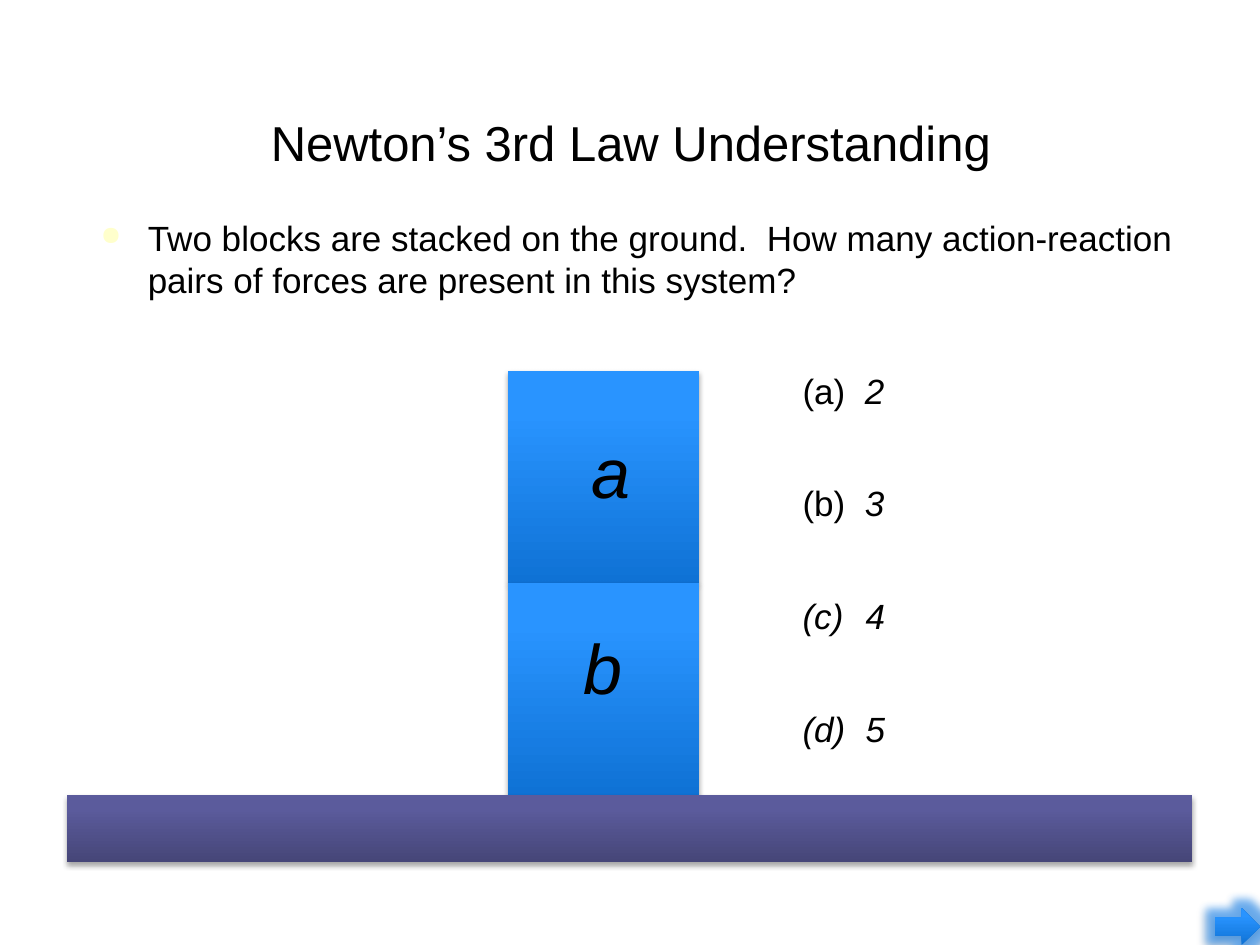
from lxml import etree
from pptx import Presentation
from pptx import util as u
from pptx.dml.color import RGBColor
from pptx.enum import shapes, text
from pptx.oxml.ns import qn

COLORS = {
    "text": "000000",
    "bullet": "FFFFCC",
    "shadow": "000000",
    "glow": "2994FF",
}
BLUE = {0: "0F72D5", 80: "2994FF", 100: "2B95FF"}
PURPLE = {0: "464678", 80: "5B5B9C", 100: "5B5B9E"}
ANSWERS = [("(a)  ", "2"), ("(b)  ", "3"), ("", "4"), ("", "5")]


def sub(parent, tag, **attributes):
    values = {key: str(value) for key, value in attributes.items()}
    return etree.SubElement(parent, qn(tag), values)


def add_color(parent, color, alpha=100):
    clr = sub(parent, "a:srgbClr", val=color)
    if alpha < 100:
        sub(clr, "a:alpha", val=alpha * 1000)


def add_solid(slide, preset, box, gradient, glow=False):
    """Add an unlined preset shape, shaded from bottom to top, with a soft shadow."""
    solid = slide.shapes.add_shape(preset, *map(u.Cm, box))
    solid.line.fill.background()
    solid.fill.gradient()
    solid.fill.gradient_angle = 90
    solid.shadow.inherit = False
    properties = solid._element.spPr

    stops = properties.find(".//" + qn("a:gsLst"))
    for stop in list(stops):
        stops.remove(stop)
    for position, color in gradient.items():
        add_color(sub(stops, "a:gs", pos=position * 1000), color)

    effects = properties.find(qn("a:effectLst"))
    if glow:
        add_color(sub(effects, "a:glow", rad=u.Pt(10)), COLORS["glow"], 60)
    shadow = sub(effects, "a:outerShdw", blurRad=u.Pt(3.1), dist=u.Pt(1.8),
                 dir=90 * 60000, rotWithShape=0)
    add_color(shadow, COLORS["shadow"], 35)


def add_frame(slide, box, wrap=True):
    frame = slide.shapes.add_textbox(*map(u.Cm, box)).text_frame
    frame.word_wrap = wrap
    return frame


def style(paragraph, size, italic=None):
    paragraph.font.name = "Arial"
    paragraph.font.size = u.Pt(size)
    paragraph.font.italic = italic
    paragraph.font.color.rgb = RGBColor.from_string(COLORS["text"])


def hang(paragraph, indent):
    """Give a hanging indent and return the properties that take a bullet."""
    properties = paragraph._p.get_or_add_pPr()
    properties.set("marL", str(u.Cm(indent)))
    properties.set("indent", str(-u.Cm(indent)))
    return properties


def add_title(slide, wording):
    frame = add_frame(slide, (2.34, 1.27, 20.75, 3.18))
    frame.vertical_anchor = text.MSO_ANCHOR.MIDDLE
    title = frame.paragraphs[0]
    title.text = wording
    title.alignment = text.PP_ALIGN.CENTER
    style(title, 28)


def add_question(slide, wording):
    question = add_frame(slide, (1.78, 4.24, 22.12, 1.7)).paragraphs[0]
    question.text = wording
    style(question, 20)
    properties = hang(question, 0.95)
    bullet_color = sub(properties, "a:buClr")
    add_color(bullet_color, COLORS["bullet"])
    sub(properties, "a:buSzPct", val=75000)
    sub(properties, "a:buChar", char="●")
    properties.append(properties.find(qn("a:defRPr")))


def add_answers(slide):
    frame = add_frame(slide, (15.93, 7.42, 3.45, 8.13))
    for index, (label, value) in enumerate(ANSWERS):
        answer = frame.add_paragraph() if index else frame.paragraphs[0]
        answer.line_spacing = 0.9
        answer.space_before = u.Pt(42.7 if index else 0)
        properties = hang(answer, 1.27)
        if label:
            answer.add_run().text = label
        else:
            sub(properties, "a:buAutoNum", type="alphaLcParenBoth", startAt=3)
        number = answer.add_run()
        number.text = value
        number.font.italic = True
        style(answer, 20)


def add_block(slide, top, name, name_left, name_top):
    add_solid(slide, shapes.MSO_SHAPE.RECTANGLE, (10.24, top, 3.86, 4.28), BLUE)
    frame = add_frame(slide, (name_left, name_top, 1.3, 1.78), wrap=False)
    label = frame.paragraphs[0]
    label.text = name
    label.line_spacing = 0.9
    style(label, 40, italic=True)


def main():
    deck = Presentation()
    deck.slide_width, deck.slide_height = u.Cm(25.4), u.Cm(19.05)
    slide = deck.slides.add_slide(deck.slide_layouts[6])

    add_title(slide, "Newton’s 3rd Law Understanding")
    add_question(slide, "Two blocks are stacked on the ground.  How many "
                        "action-reaction pairs of forces are present in this system?")
    add_answers(slide)
    add_block(slide, 7.47, "a", 11.68, 8.71)
    add_block(slide, 11.75, "b", 11.51, 12.65)
    add_solid(slide, shapes.MSO_SHAPE.RECTANGLE, (1.35, 16.03, 22.68, 1.35), PURPLE)
    add_solid(slide, shapes.MSO_SHAPE.RIGHT_ARROW, (24.49, 18.31, 0.91, 0.74), BLUE,
              glow=True)
    deck.save("out.pptx")


if __name__ == "__main__":
    main()
